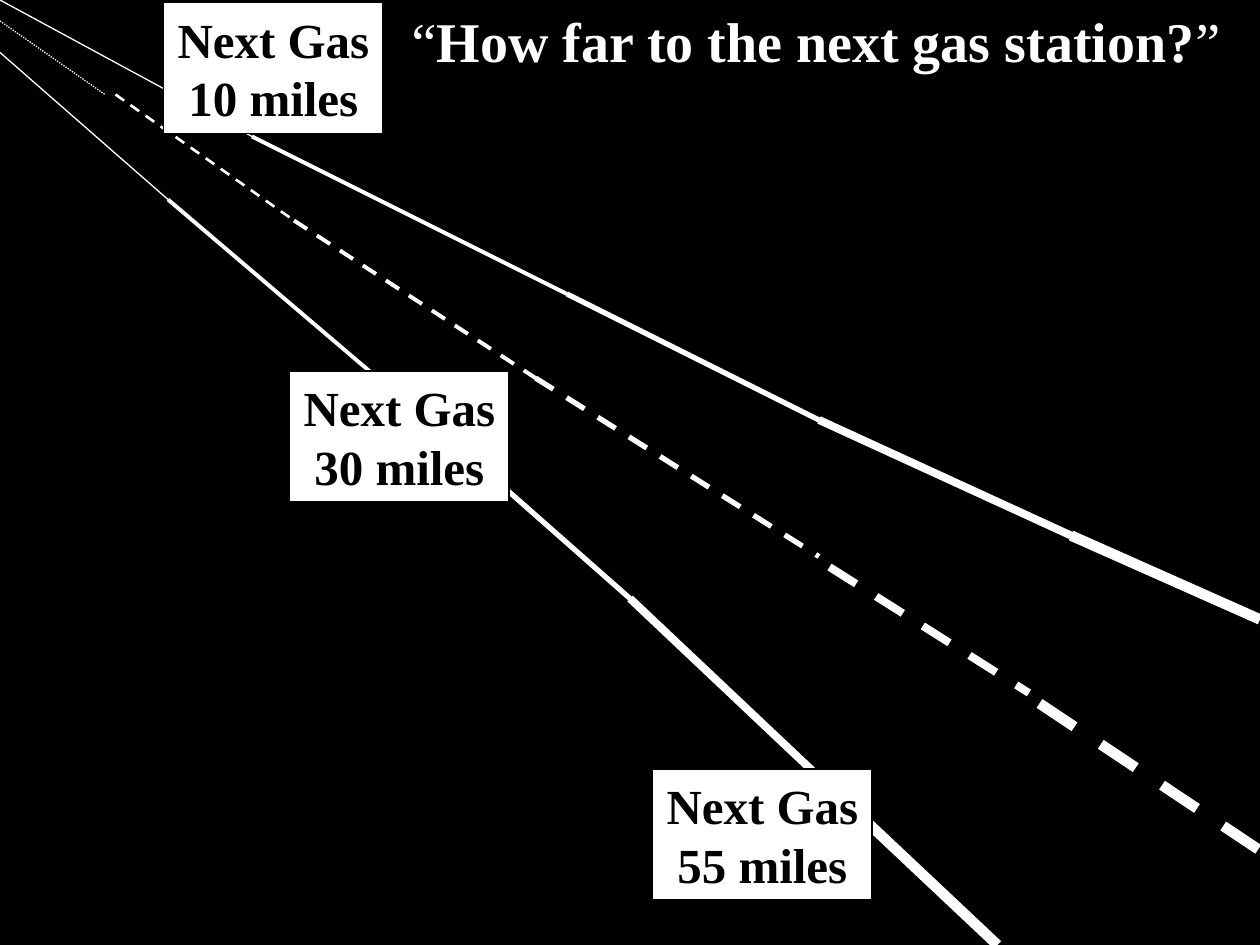
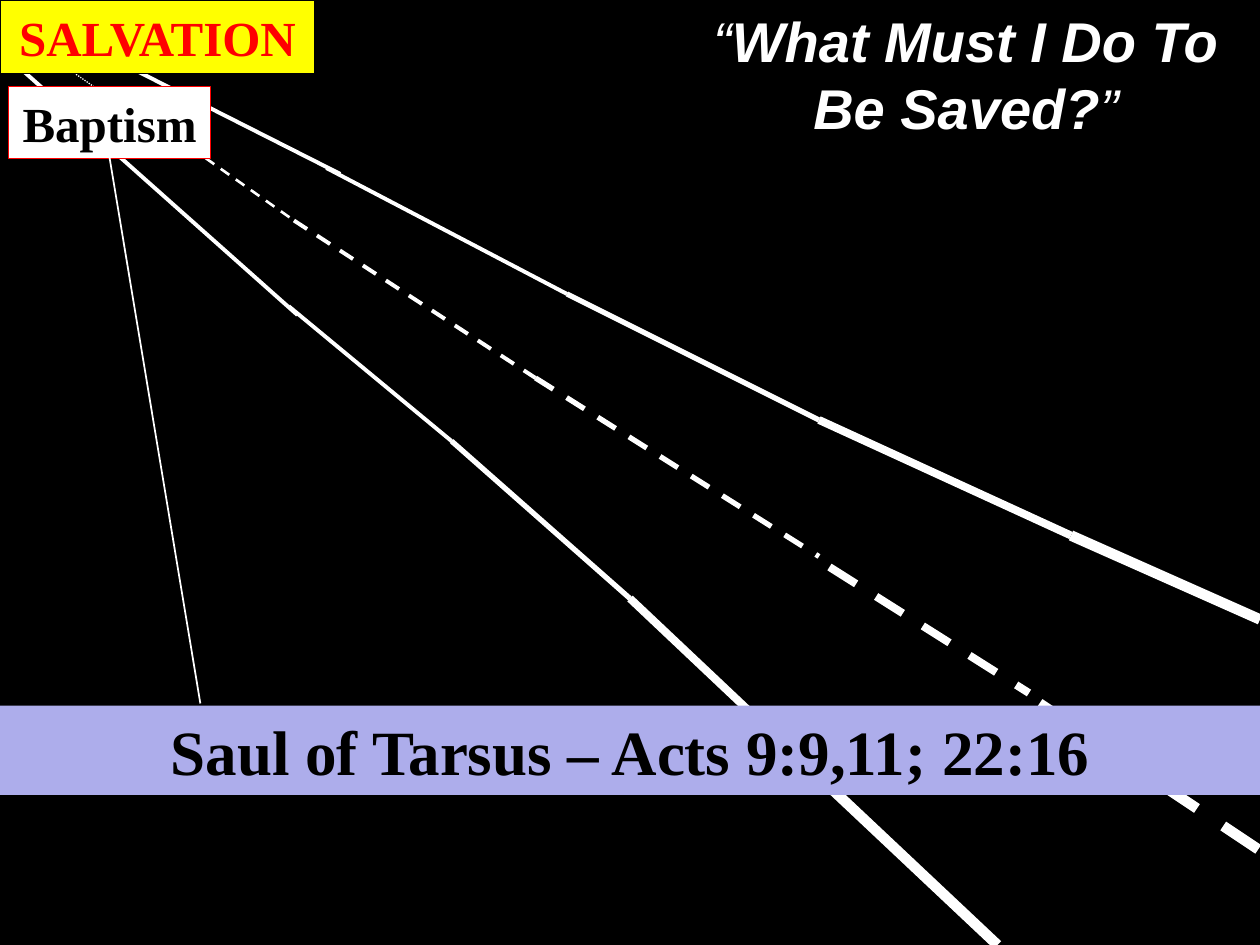
from itertools import pairwise
from pptx import Presentation
from pptx.dml.color import RGBColor
from pptx.enum.dml import MSO_LINE_DASH_STYLE as Dash
from pptx.enum.shapes import MSO_CONNECTOR, MSO_SHAPE
from pptx.enum.text import MSO_ANCHOR, MSO_AUTO_SIZE, PP_ALIGN
from pptx.oxml.ns import qn
from pptx.util import Pt

WHITE, BLACK, RED, YELLOW, LAVENDER = "FFFFFF", "000000", "FF0000", "FFFF00", "ADADEB"
SERIF, SANS = "Times New Roman", "Arial"

NEAR_WIDTHS = (3, 4.5, 6)
NEAR_EDGES = [
    [(258, 252), (360, 342), (468, 444), (570, 540)],
    [(324, 168), (468, 240), (612, 306), (720, 354)],
]
CENTER_LINE = [
    ((0, 12), (60, 54), 0.75, Dash.ROUND_DOT),
    ((66, 54), (168, 126), 1.5, Dash.DASH),
    ((168, 126), (306, 216), 2.25, Dash.DASH),
    ((306, 216), (468, 318), 3, Dash.DASH),
    ((474, 324), (588, 396), 4.5, Dash.DASH),
    ((594, 402), (720, 486), 6, Dash.DASH),
]

SIGN_SIZE = (125.3, 74.9)
SLIDES = [
    {
        "title": "How far to the next gas station?",
        "title_box": (228, 0, 492, 45.4),
        "title_style": (SERIF, False, PP_ALIGN.LEFT),
        "far_edges": [
            ((96, 114), (0, 30), 0.75),
            ((144, 78), (0, 0), 0.75),
            ((144, 78), (324, 168), 2.25),
            ((96, 114), (258, 252), 2.25),
        ],
        "boxes": [
            (f"Next Gas\n{miles} miles", (left, top, *SIGN_SIZE), WHITE, BLACK, BLACK, 28)
            for miles, left, top in [(55, 373, 439.5), (30, 165.6, 212), (10, 93.6, 1.4)]
        ],
        "pointers": [],
    },
    {
        "title": "What Must I Do To Be Saved?",
        "title_box": (384, 0, 336, 84),
        "title_style": (SANS, True, PP_ALIGN.CENTER),
        "far_edges": [
            ((170, 180), (1.4, 30), 2.25),
            ((194.4, 99.4), (0, 1), 2.25),
            ((186.5, 96), (324, 168), 2.25),
            ((165, 175), (258, 252), 2.25),
        ],
        "boxes": [
            ("Baptism", (5, 49.5, 115.3, 41), WHITE, RED, BLACK, 28),
            ("SALVATION", (0, 0, 180, 42), YELLOW, BLACK, RED, 28),
            ("Saul of Tarsus – Acts 9:9,11; 22:16", (0, 403.2, 720, 51), LAVENDER, None, BLACK, 36),
        ],
        "pointers": [((62.6, 90), (114.5, 402), 1)],
    },
]


def color(value):
    return RGBColor.from_string(value)


def style_run(run, font_name, size, font_color, bold, italic=False):
    font = run.font
    font.name, font.size, font.bold, font.italic = font_name, Pt(size), bold, italic
    font.color.rgb = color(font_color)


def add_line(slide, start, end, width, dash=None):
    points = [Pt(value) for value in (*start, *end)]
    line = slide.shapes.add_connector(MSO_CONNECTOR.STRAIGHT, *points)
    line.line.color.rgb = color(WHITE)
    line.line.width = Pt(width)
    if dash:
        line.line.dash_style = dash
    properties = line._element.spPr
    properties.append(properties.makeelement(qn("a:effectLst"), {}))


def add_road(slide, far_edges):
    for segment in far_edges:
        add_line(slide, *segment)
    for edge in NEAR_EDGES:
        for (start, end), width in zip(pairwise(edge), NEAR_WIDTHS):
            add_line(slide, start, end, width)
    for segment in CENTER_LINE:
        add_line(slide, *segment)


def add_title(slide, text, box, font_name, italic, alignment):
    title = slide.shapes.title
    title.left, title.top, title.width, title.height = map(Pt, box)
    text_frame = title.text_frame
    text_frame.auto_size = MSO_AUTO_SIZE.NONE
    text_frame.vertical_anchor = MSO_ANCHOR.TOP
    paragraph = text_frame.paragraphs[0]
    paragraph.alignment = alignment
    for part, bold in (("“", False), (text, True), ("”", False)):
        run = paragraph.add_run()
        run.text = part
        style_run(run, font_name, 32, WHITE, bold, italic)


def add_box(slide, text, box, fill, outline, text_color, size):
    shape = slide.shapes.add_shape(MSO_SHAPE.RECTANGLE, *map(Pt, box))
    shape.shadow.inherit = False
    shape.fill.solid()
    shape.fill.fore_color.rgb = color(fill)
    if outline:
        shape.line.color.rgb = color(outline)
        shape.line.width = Pt(0.75)
    else:
        shape.line.fill.background()
    text_frame = shape.text_frame
    text_frame.word_wrap = False
    text_frame.vertical_anchor = MSO_ANCHOR.MIDDLE
    text_frame.text = text
    for paragraph in text_frame.paragraphs:
        paragraph.alignment = PP_ALIGN.CENTER
        style_run(paragraph.runs[0], SERIF, size, text_color, True)


def main():
    presentation = Presentation()
    presentation.slide_width, presentation.slide_height = Pt(720), Pt(540)
    background = presentation.slide_master.background.fill
    background.solid()
    background.fore_color.rgb = color(BLACK)
    title_only = presentation.slide_layouts.get_by_name("Title Only")
    for content in SLIDES:
        slide = presentation.slides.add_slide(title_only)
        add_road(slide, content["far_edges"])
        add_title(slide, content["title"], content["title_box"], *content["title_style"])
        for box in content["boxes"]:
            add_box(slide, *box)
        for pointer in content["pointers"]:
            add_line(slide, *pointer)
    presentation.save("out.pptx")


if __name__ == "__main__":
    main()
